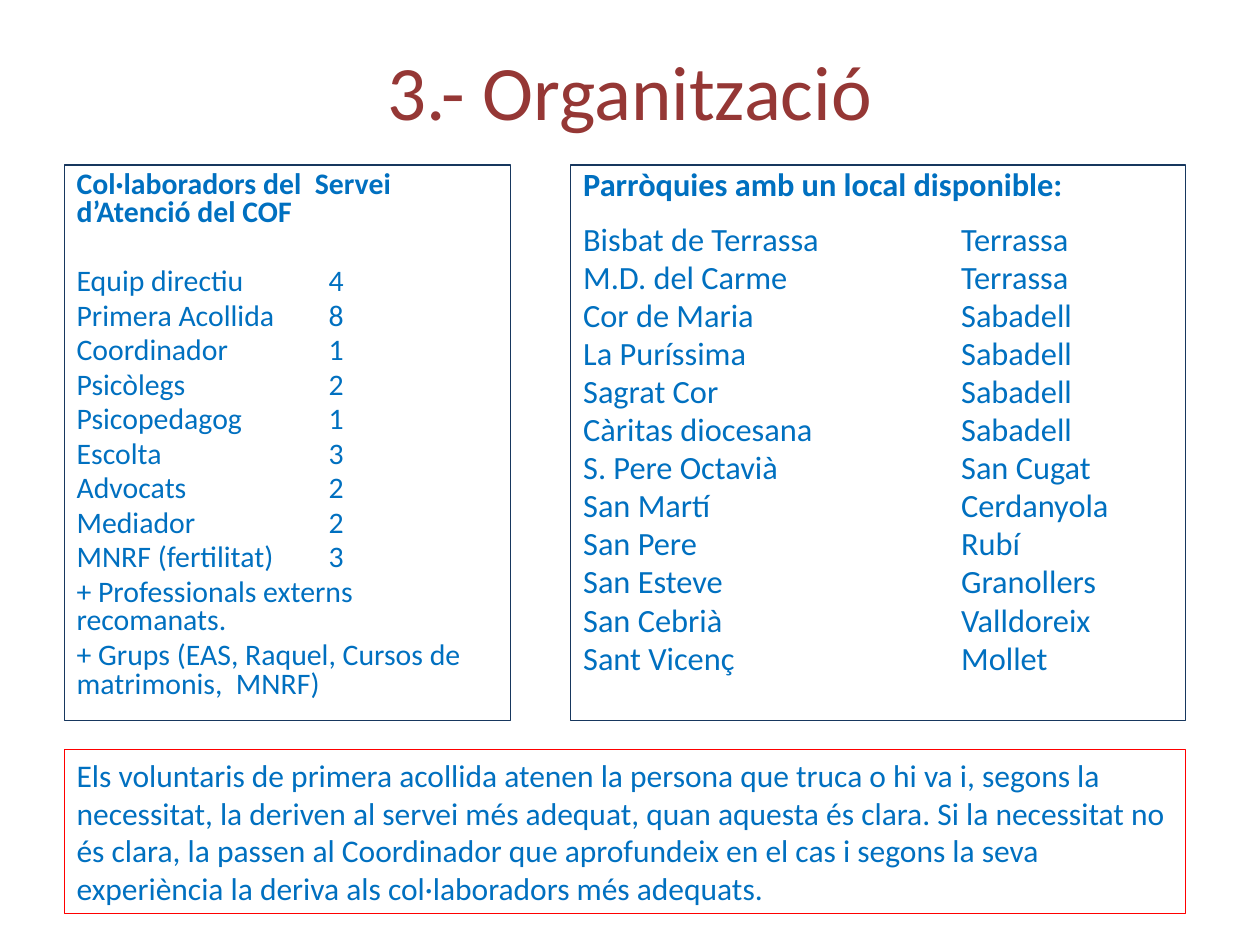
from dataclasses import dataclass

import lxml.etree
import pptx
import pptx.dml.color
import pptx.enum.shapes
import pptx.enum.text
import pptx.oxml.ns
import pptx.util
from pptx.util import Inches

COLORS = {"title": "953735", "text": "0070C0", "navy": "17375E", "red": "FF0000"}
FONT = "Calibri"


@dataclass
class Panel:
    left: float
    top: float
    width: float
    height: float
    border: str
    size: float
    rows: list[str]
    head: str = ""
    tab: float = 0
    spacing: float = 1
    before: float = 0
    gap: float = 0  # space between heading and rows


def color(name: str) -> pptx.dml.color.RGBColor:
    return pptx.dml.color.RGBColor.from_string(COLORS[name])


def style(para, size: float, tint: str, bold: bool = False) -> None:
    font = para.font
    font.name, font.size, font.bold = FONT, pptx.util.Pt(size), bold
    font.color.rgb = color(tint)


def add_tab(para, pos: float) -> None:
    qn = pptx.oxml.ns.qn
    stops = lxml.etree.SubElement(para._p.get_or_add_pPr(), qn("a:tabLst"))
    lxml.etree.SubElement(stops, qn("a:tab"), pos=str(Inches(pos)), algn="l")


def draw_panel(slide, panel: Panel) -> None:
    box = slide.shapes.add_shape(
        pptx.enum.shapes.MSO_SHAPE.RECTANGLE,
        Inches(panel.left), Inches(panel.top),
        Inches(panel.width), Inches(panel.height))
    box.shadow.inherit = False
    box.fill.background()
    box.line.color.rgb = color(panel.border)
    box.line.width = pptx.util.Pt(0.75)

    frame = box.text_frame
    frame.word_wrap = True
    frame.vertical_anchor = pptx.enum.text.MSO_ANCHOR.TOP
    lines = ([panel.head] if panel.head else []) + panel.rows
    for i, text in enumerate(lines):
        para = frame.paragraphs[0] if i == 0 else frame.add_paragraph()
        para.text = text
        para.alignment = pptx.enum.text.PP_ALIGN.LEFT
        para.line_spacing = panel.spacing
        first = panel.head and i == 1
        para.space_before = pptx.util.Pt(panel.gap if first else panel.before)
        if "\t" in text:
            add_tab(para, panel.tab)
        style(para, panel.size, "text", bold=bool(panel.head) and i == 0)


# Staff and their numbers
STAFF = [
    ("Equip directiu", 4), ("Primera Acollida", 8), ("Coordinador", 1),
    ("Psicòlegs", 2), ("Psicopedagog", 1), ("Escolta", 3),
    ("Advocats", 2), ("Mediador", 2), ("MNRF (fertilitat)", 3),
]
EXTRAS = [
    "+ Professionals externs recomanats.",
    "+ Grups (EAS, Raquel, Cursos de matrimonis,  MNRF)",
]

# Parishes and their towns
PLACES = [
    ("Bisbat de Terrassa", "Terrassa"), ("M.D. del Carme", "Terrassa"),
    ("Cor de Maria", "Sabadell"), ("La Puríssima", "Sabadell"),
    ("Sagrat Cor", "Sabadell"), ("Càritas diocesana", "Sabadell"),
    ("S. Pere Octavià", "San Cugat"), ("San Martí", "Cerdanyola"),
    ("San Pere", "Rubí"), ("San Esteve", "Granollers"),
    ("San Cebrià", "Valldoreix"), ("Sant Vicenç", "Mollet"),
]

NOTE = (
    "Els voluntaris de primera acollida atenen la persona que truca o hi va i, "
    "segons la necessitat, la deriven al servei més adequat, quan aquesta és "
    "clara. Si la necessitat no és clara, la passen al Coordinador que "
    "aprofundeix en el cas i segons la seva experiència la deriva als "
    "col·laboradors més adequats."
)

PANELS = [
    Panel(4.53, 1.31, 4.88, 4.41, "navy", 18.5,
          [f"{name}\t{town}" for name, town in PLACES],
          head="Parròquies amb un local disponible:",
          tab=3, spacing=0.8, before=4, gap=13.6),
    Panel(0.51, 1.31, 3.54, 4.41, "navy", 17,
          [f"{role}\t{count}" for role, count in STAFF] + EXTRAS,
          head="Col·laboradors del  Servei d’Atenció del COF",
          tab=2, spacing=0.8, before=3.4, gap=23.1),
    Panel(0.51, 5.95, 8.9, 1.3, "red", 18, [NOTE]),
]


def main() -> None:
    deck = pptx.Presentation()
    deck.slide_width, deck.slide_height = Inches(10), Inches(7.5)
    slide = deck.slides.add_slide(deck.slide_layouts[5])

    # Title
    title = slide.shapes.title
    title.left, title.top = Inches(0.75), Inches(0.28)
    title.width, title.height = Inches(8.5), Inches(0.87)
    title.text_frame.text = "3.- Organització"
    title.text_frame.vertical_anchor = pptx.enum.text.MSO_ANCHOR.MIDDLE
    para = title.text_frame.paragraphs[0]
    para.alignment = pptx.enum.text.PP_ALIGN.CENTER
    style(para, 44, "title")

    # Framed lists and closing note
    for panel in PANELS:
        draw_panel(slide, panel)

    deck.save("out.pptx")


if __name__ == "__main__":
    main()
